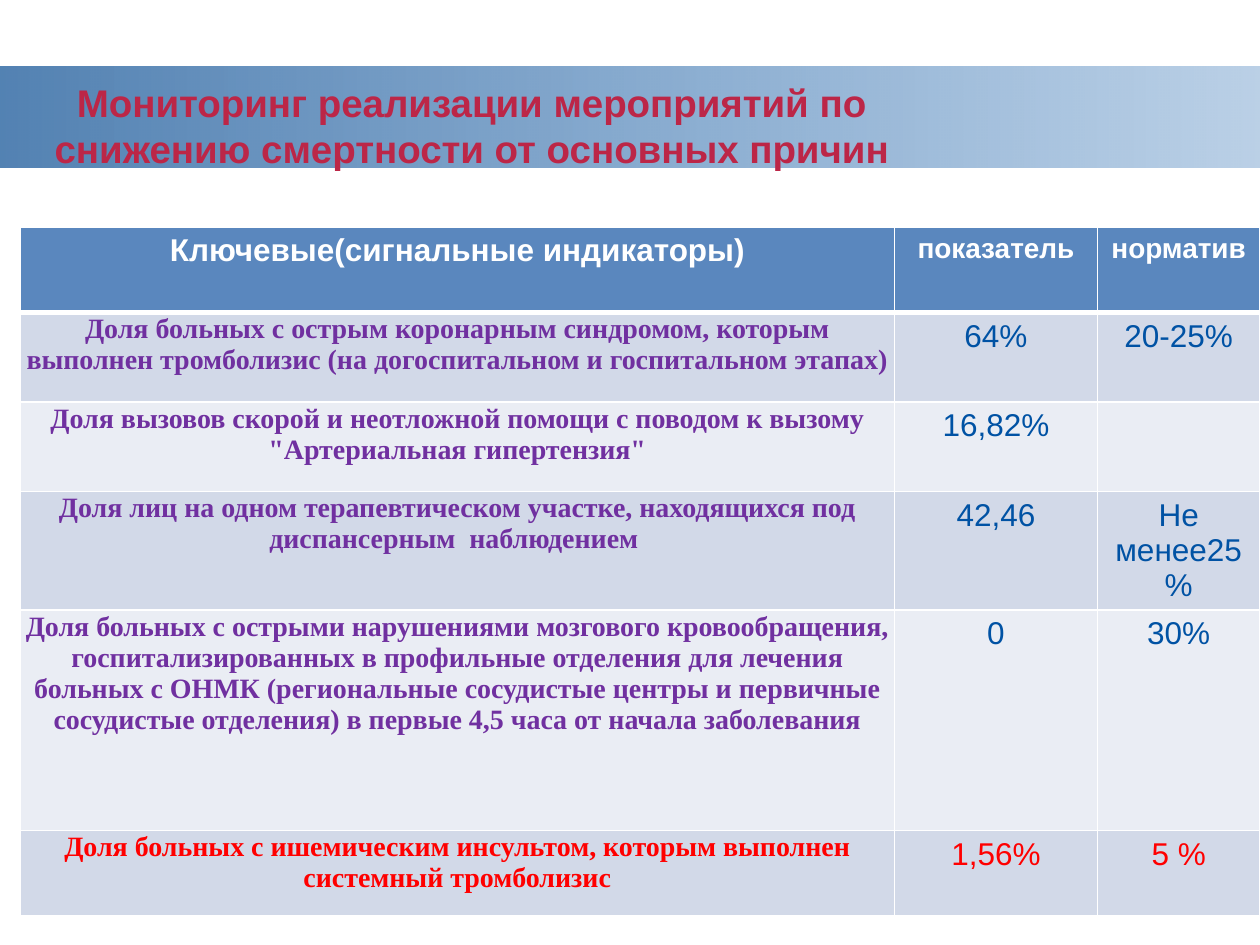
from pptx import Presentation
from pptx.dml.color import RGBColor
from pptx.enum.shapes import MSO_SHAPE as Shape
from pptx.enum.text import MSO_ANCHOR as Anchor, MSO_AUTO_SIZE as AutoSize, PP_ALIGN as Align
from pptx.oxml.ns import qn
from pptx.oxml.xmlchemy import OxmlElement
from pptx.util import Inches, Pt

COLORS = {
    "band_start": "00478F", "band_end": "0052A4", "title": "BC2647",
    "header": "5A87BE", "dark_row": "D2D9E8", "light_row": "EAEDF4",
    "white": "FFFFFF", "purple": "7030A0", "blue": "0052A4", "red": "FF0000",
}
GRID = 0.1  # inches per column and row: 100 columns by 75 rows

TITLE = "Мониторинг реализации мероприятий по снижению смертности от основных причин"
HEADERS = ["Ключевые(сигнальные индикаторы)", "показатель", "норматив"]
INDICATORS = [
    ("Доля больных с острым коронарным синдромом, которым выполнен тромболизис "
     "(на догоспитальном и госпитальном этапах)", "64%", "20-25%"),
    ("Доля вызовов скорой и неотложной помощи с поводом к вызому "
     "\"Артериальная гипертензия\"", "16,82%", ""),
    ("Доля лиц на одном терапевтическом участке, находящихся под "
     "диспансерным  наблюдением ", "42,46", "Не менее25%"),
    ("Доля больных с острыми нарушениями мозгового кровообращения, "
     "госпитализированных в профильные отделения для лечения больных с ОНМК "
     "(региональные сосудистые центры и первичные сосудистые отделения) "
     "в первые 4,5 часа от начала заболевания", "0", "30%"),
    ("Доля больных с ишемическим инсультом, которым выполнен системный тромболизис",
     "1,56%", "5 %"),
]
COLUMN_WIDTHS = [69.4, 16.1, 12.9]
ROW_HEIGHTS = [6.8, 7.1, 7.1, 7.1, 17.5, 6.8]


def cells(count):
    return Inches(count * GRID)


def rgb(name):
    return RGBColor.from_string(COLORS[name])


class SlideBuilder:
    def __init__(self, deck):
        self.slide = deck.slides.add_slide(deck.slide_layouts[5])

    def text(self, frame, words, color, size, name="Arial", bold=True):
        para = frame.paragraphs[0]
        para.alignment = Align.CENTER
        if not words:
            return
        span = para.add_run()
        span.text = words
        for key, value in {"name": name, "size": Pt(size), "bold": bold}.items():
            setattr(span.font, key, value)
        span.font.color.rgb = rgb(color)

    def title(self, words, left, top, width, height):
        box = self.slide.shapes.title
        place = {"left": left, "top": top, "width": width, "height": height}
        for key, value in place.items():
            setattr(box, key, cells(value))
        frame = box.text_frame
        layout = {"word_wrap": True, "auto_size": AutoSize.NONE,
                  "vertical_anchor": Anchor.MIDDLE}
        for key, value in layout.items():
            setattr(frame, key, value)
        self.text(frame, words, "title", 22)

    def band(self, left, top, width, height, stops):
        """Add a gradient strip behind everything; stops are (color, opacity %)."""
        strip = self.slide.shapes.add_shape(
            Shape.RECTANGLE, *map(cells, (left, top, width, height)))
        strip.shadow.inherit = False
        strip.line.fill.background()
        strip.fill.gradient()
        strip.fill.gradient_angle = 0
        for stop, (color, _) in zip(strip.fill.gradient_stops, stops):
            stop.color.rgb = rgb(color)
        tints = strip._element.spPr.iter(qn("a:srgbClr"))
        for tint, (_, opacity) in zip(tints, stops):
            alpha = OxmlElement("a:alpha")
            alpha.set("val", str(opacity * 1000))
            tint.append(alpha)
        self.slide.shapes._spTree.insert(2, strip._element)

    def borders(self, cell, top, bottom):
        properties = cell._tc.get_or_add_tcPr()
        widths = {"a:lnL": 1, "a:lnR": 1, "a:lnT": top, "a:lnB": bottom}
        for index, (tag, width) in enumerate(widths.items()):
            line = OxmlElement(tag)
            line.set("w", str(Pt(width)))
            fill = OxmlElement("a:solidFill")
            color = OxmlElement("a:srgbClr")
            color.set("val", COLORS["white"])
            fill.append(color)
            line.append(fill)
            properties.insert(index, line)

    def cell(self, cell, words, fill, style, top=1, bottom=1):
        cell.fill.solid()
        cell.fill.fore_color.rgb = rgb(fill)
        self.borders(cell, top, bottom)
        self.text(cell.text_frame, words, **style)

    def table(self, left, top, widths, heights, headers, records):
        grid = self.slide.shapes.add_table(
            len(heights), len(widths),
            *map(cells, (left, top, sum(widths), sum(heights)))).table
        for column, width in zip(grid.columns, widths):
            column.width = cells(width)
        for row, height in zip(grid.rows, heights):
            row.height = cells(height)
        for column, words in enumerate(headers):
            style = {"color": "white", "size": 16 if column else 18}
            self.cell(grid.cell(0, column), words, "header", style, bottom=3)
        for row, record in enumerate(records, 1):
            last = row == len(records)
            fill = "dark_row" if row % 2 else "light_row"
            label = {"color": "red" if last else "purple", "size": 16,
                     "name": "Times New Roman"}
            value = {"color": "red" if last else "blue", "size": 18, "bold": False}
            for column, words in enumerate(record):
                self.cell(grid.cell(row, column), words, fill,
                          value if column else label, top=3 if row == 1 else 1)
            insets = {"margin_left": 0.01, "margin_top": 0.01,
                      "margin_right": 0.01, "margin_bottom": 0}
            for key, inset in insets.items():
                setattr(grid.cell(row, 0), key, Inches(inset))


def main():
    deck = Presentation()
    deck.slide_width, deck.slide_height = cells(100), cells(75)
    builder = SlideBuilder(deck)
    builder.band(0, 5.3, 100, 8, [("band_start", 68), ("band_end", 27)])
    builder.title(TITLE, 2.3, 4.7, 70.3, 10.5)
    builder.table(1.6, 18, COLUMN_WIDTHS, ROW_HEIGHTS, HEADERS, INDICATORS)
    deck.save("out.pptx")


if __name__ == "__main__":
    main()
